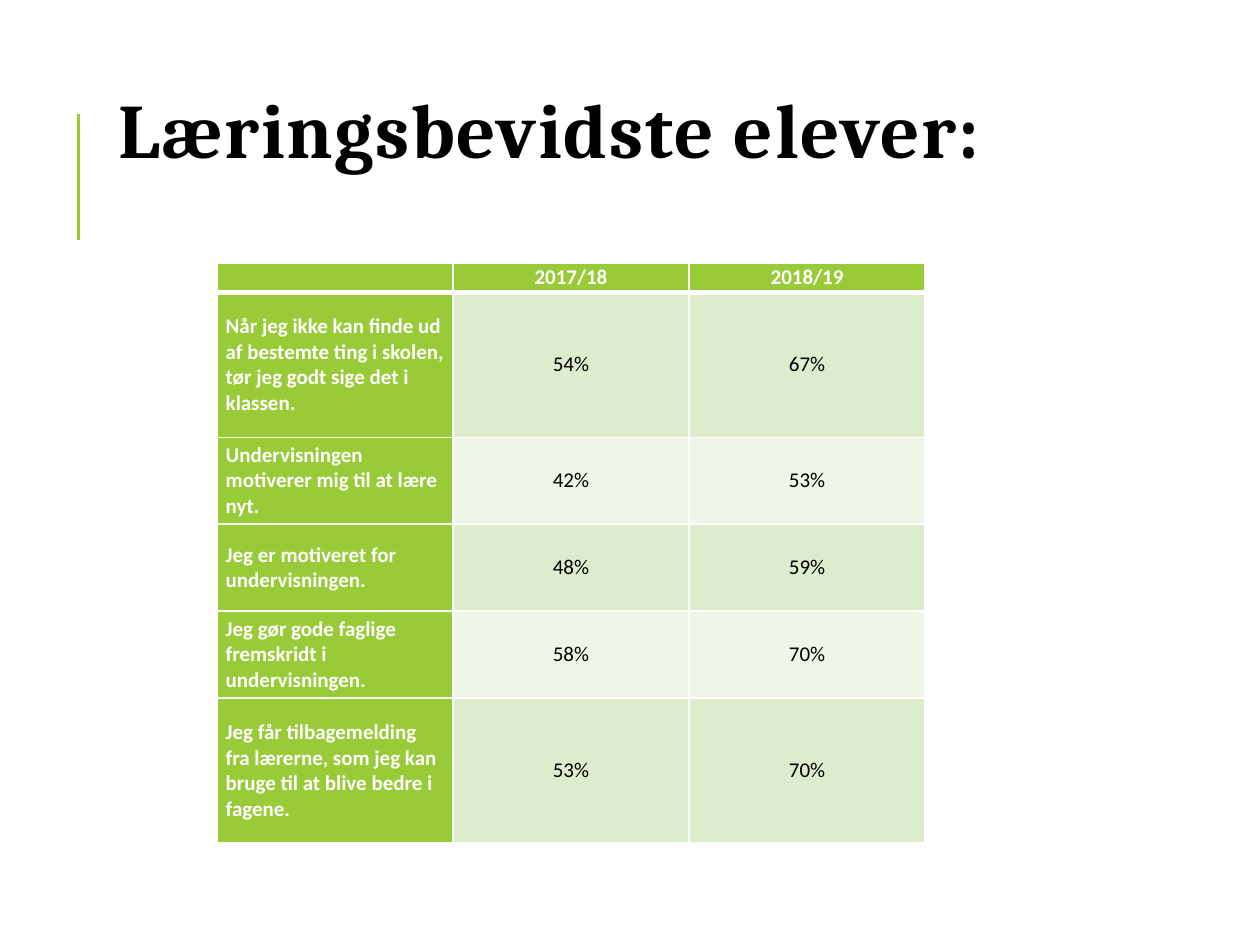
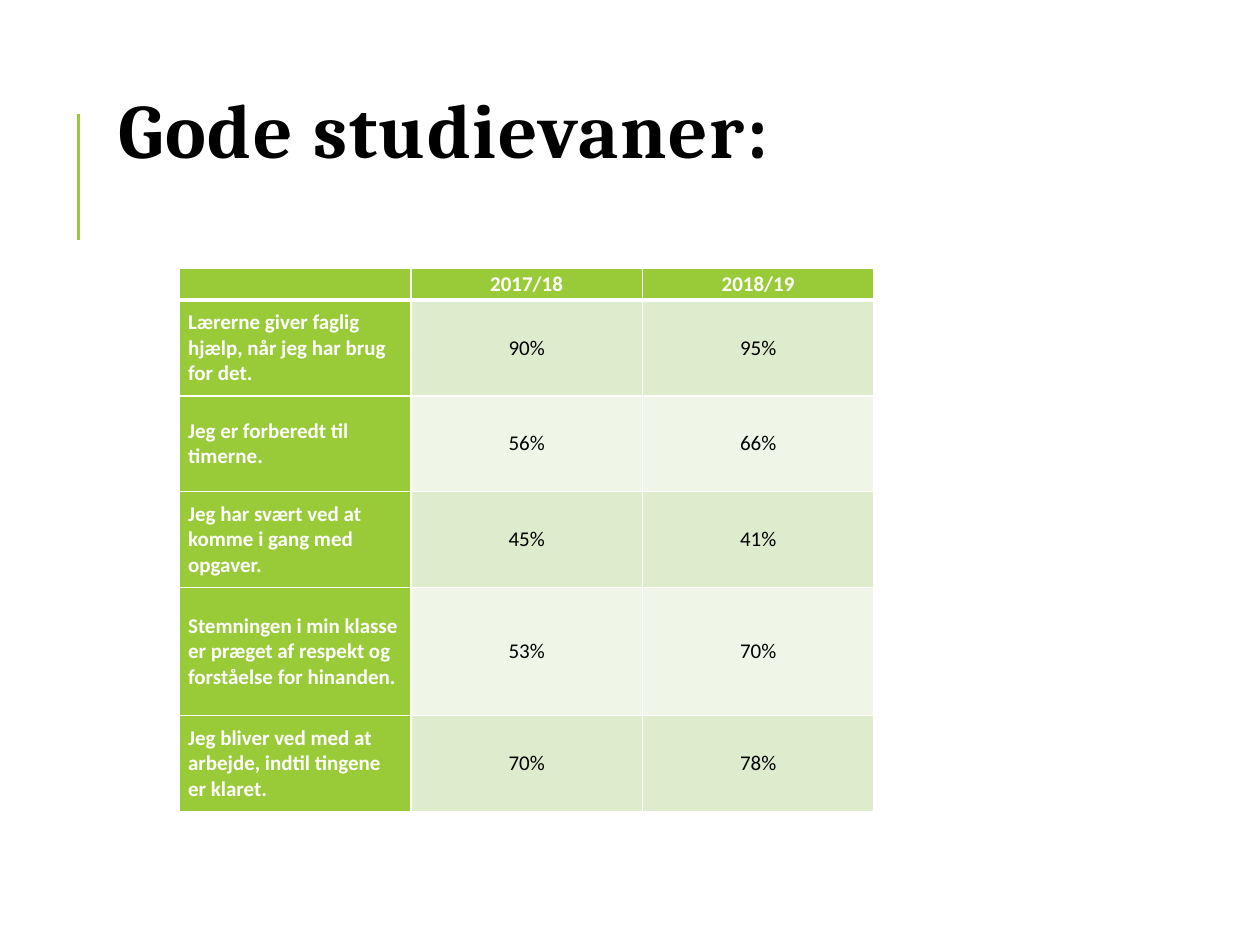
from lxml import etree
from pptx import Presentation
from pptx.dml.color import RGBColor
from pptx.enum.shapes import MSO_CONNECTOR
from pptx.enum.text import MSO_ANCHOR, MSO_AUTO_SIZE, PP_ALIGN
from pptx.oxml.ns import qn
from pptx.util import Pt

STRAIGHT = MSO_CONNECTOR.STRAIGHT
TOP, MIDDLE = MSO_ANCHOR.TOP, MSO_ANCHOR.MIDDLE
LEFT, CENTER = PP_ALIGN.LEFT, PP_ALIGN.CENTER
NO_FIT = MSO_AUTO_SIZE.NONE

COLORS = {"green": "99CB38", "odd": "DEECCE", "even": "EFF6E8",
          "white": "FFFFFF", "black": "000000"}
TITLE_FONT = {"name": "Cambria", "size": Pt(44), "bold": True}
CELL_FONT = {"name": "Calibri", "size": Pt(12)}
TITLE_BOX = {"left": Pt(60.5), "top": Pt(46), "width": Pt(574), "height": Pt(118)}
TITLE_FRAME = {"auto_size": NO_FIT, "word_wrap": True, "vertical_anchor": TOP,
               "margin_left": Pt(7.2), "margin_top": Pt(11)}
CELL_FRAME = {"vertical_anchor": MIDDLE, "margin_left": Pt(5), "margin_right": Pt(5),
              "margin_top": 0, "margin_bottom": 0}
YEARS = ["", "2017/18", "2018/19"]

SURVEYS = [
    {"title": "Læringsbevidste elever:",
     "left": 124, "top": 150.5, "column": 134.9,
     "heights": [16.5, 82.9, 49.7, 49.7, 49.7, 82.9],
     "answers": [
         ["Når jeg ikke kan finde ud af bestemte ting i skolen, tør jeg godt sige det i klassen.",
          "54%", "67%"],
         ["Undervisningen motiverer mig til at lære nyt.", "42%", "53%"],
         ["Jeg er motiveret for undervisningen.", "48%", "59%"],
         ["Jeg gør gode faglige fremskridt i undervisningen.", "58%", "70%"],
         ["Jeg får tilbagemelding fra lærerne, som jeg kan bruge til at blive bedre i fagene.",
          "53%", "70%"]]},
    {"title": "Gode studievaner:",
     "left": 102.5, "top": 153.2, "column": 132.3,
     "heights": [18.2, 54.8, 54.8, 54.8, 73.2, 54.8],
     "answers": [
         ["Lærerne giver faglig hjælp, når jeg har brug for det.", "90%", "95%"],
         ["Jeg er forberedt til timerne.", "56%", "66%"],
         ["Jeg har svært ved at komme i gang med opgaver.", "45%", "41%"],
         ["Stemningen i min klasse er præget af respekt og forståelse for hinanden.",
          "53%", "70%"],
         ["Jeg bliver ved med at arbejde, indtil tingene er klaret.", "70%", "78%"]]},
]


def apply(target, values):
    """Set each named format value on the target."""
    for name, value in values.items():
        setattr(target, name, value)


def add_borders(cell, bottom_width):
    """Draw white cell edges, placed before the fill as the schema requires."""
    tcPr = cell._tc.get_or_add_tcPr()
    for i, (side, width) in enumerate([("lnL", 1), ("lnR", 1), ("lnT", 1),
                                       ("lnB", bottom_width)]):
        ln = etree.Element(qn(f"a:{side}"), w=str(Pt(width)))
        fill = etree.SubElement(ln, qn("a:solidFill"))
        etree.SubElement(fill, qn("a:srgbClr"), val=COLORS["white"])
        tcPr.insert(i, ln)


prs = Presentation()
prs.slide_width, prs.slide_height = Pt(720), Pt(540)

for survey in SURVEYS:
    s = prs.slides.add_slide(prs.slide_layouts[5])

    bar = s.shapes.add_connector(STRAIGHT, Pt(44.8), Pt(137), Pt(44.8), Pt(65))
    bar.line.color.rgb = RGBColor.from_string(COLORS["green"])
    bar.line.width = Pt(1.5)
    etree.SubElement(bar._element.spPr, qn("a:effectLst"))

    title = s.shapes.title
    apply(title, TITLE_BOX)
    tf = title.text_frame
    apply(tf, TITLE_FRAME)
    p = tf.paragraphs[0]
    apply(p, {"alignment": LEFT, "line_spacing": 0.8})
    r = p.add_run()
    r.text = survey["title"]
    apply(r.font, TITLE_FONT)
    r.font.color.rgb = RGBColor.from_string(COLORS["black"])
    r.font._element.set("spc", "100")

    rows = [YEARS] + survey["answers"]
    table = s.shapes.add_table(
        len(rows), len(YEARS), Pt(survey["left"]), Pt(survey["top"]),
        Pt(survey["column"] * len(YEARS)), Pt(sum(survey["heights"]))).table
    for column in table.columns:
        column.width = Pt(survey["column"])
    for i, (row, height) in enumerate(zip(rows, survey["heights"])):
        table.rows[i].height = Pt(height)
        for j, text in enumerate(row):
            heading = i == 0 or j == 0
            cell = table.cell(i, j)
            apply(cell, CELL_FRAME)
            cell.fill.solid()
            fill = "green" if heading else "odd" if i % 2 else "even"
            cell.fill.fore_color.rgb = RGBColor.from_string(COLORS[fill])
            add_borders(cell, 3 if i == 0 else 1)
            p = cell.text_frame.paragraphs[0]
            p.alignment = CENTER if j else LEFT
            if not text:
                etree.SubElement(p._p, qn("a:endParaRPr"), sz="1200")
                continue
            r = p.add_run()
            r.text = text
            apply(r.font, CELL_FONT)
            r.font.bold = heading
            r.font.color.rgb = RGBColor.from_string(COLORS["white" if heading else "black"])

prs.save("out.pptx")
